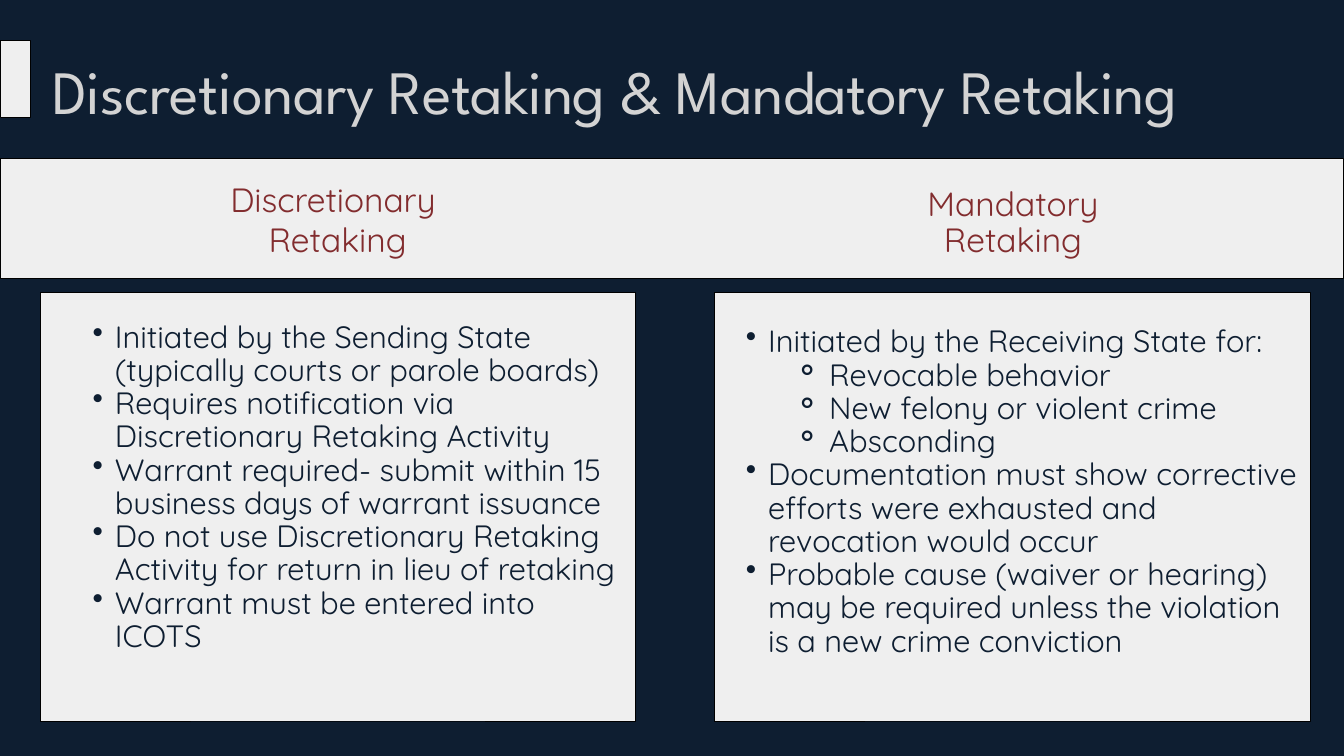
import pptx
import pptx.util
import pptx.dml.color
import pptx.enum.shapes
import pptx.enum.text
import pptx.oxml.ns
import lxml.etree

Inches = pptx.util.Inches
Pt = pptx.util.Pt
ALIGN = pptx.enum.text.PP_ALIGN

NAVY = "0E1E31"
PALE = "EFEFEF"
SILVER = "D3D3D3"
MAROON = "822C2E"
BLACK = "000000"

BULLETS = {1: ("•", 0.65, -0.33), 2: ("⚬", 1.56, -0.52)}

DISCRETIONARY = [
    (1, "Initiated by the Sending State (typically courts or parole boards)"),
    (1, "Requires notification via Discretionary Retaking Activity"),
    (1, "Warrant required- submit within 15 business days of warrant issuance"),
    (1, "Do not use Discretionary Retaking Activity for return in lieu of retaking"),
    (1, "Warrant must be entered into ICOTS"),
]
MANDATORY = [
    (1, "Initiated by the Receiving State for:"),
    (2, "Revocable behavior"),
    (2, "New felony or violent crime"),
    (2, "Absconding"),
    (1, "Documentation must show corrective efforts were exhausted and revocation would occur"),
    (1, "Probable cause (waiver or hearing) may be required unless the violation "
        "is a new crime conviction"),
]


def color(value):
    return pptx.dml.color.RGBColor.from_string(value)


def add_panel(page, left, top, width, height):
    panel = page.shapes.add_shape(
        pptx.enum.shapes.MSO_SHAPE.RECTANGLE,
        Inches(left), Inches(top), Inches(width), Inches(height))
    panel.shadow.inherit = False
    panel.fill.solid()
    panel.fill.fore_color.rgb = color(PALE)
    panel.line.color.rgb = color(BLACK)
    panel.line.width = Pt(1)


def clear_margins(frame):
    frame.word_wrap = True
    frame.margin_left = frame.margin_right = Inches(0)
    frame.margin_top = frame.margin_bottom = Inches(0)


def style_para(para, size, font, fill, spacing, align):
    para.alignment = align
    para.line_spacing = Pt(spacing)
    para.space_before = Pt(0)
    for span in para.runs:
        span.font.size = Pt(size)
        span.font.name = font
        span.font.color.rgb = color(fill)


def add_bullet(para, level):
    symbol, margin, indent = BULLETS[level]
    para.level = level
    properties = para._p.get_or_add_pPr()
    properties.set("marL", str(Inches(margin)))
    properties.set("indent", str(Inches(indent)))
    bullet = lxml.etree.SubElement(properties, pptx.oxml.ns.qn("a:buChar"))
    bullet.set("char", symbol)


def add_text(page, left, top, width, height, lines):
    box = page.shapes.add_textbox(Inches(left), Inches(top), Inches(width), Inches(height))
    clear_margins(box.text_frame)
    box.text_frame.text = "\n".join(lines)
    return box.text_frame.paragraphs


def add_heading(page, left, top, height, lines, spacing):
    for para in add_text(page, left, top, 7.23, height, lines):
        style_para(para, 36, "Quicksand", MAROON, spacing, ALIGN.CENTER)


def add_list(page, left, top, width, height, items):
    paras = add_text(page, left, top, width, height, [text for level, text in items])
    for para, (level, text) in zip(paras, items):
        add_bullet(para, level)
        style_para(para, 33, "Quicksand", NAVY, 35.6, ALIGN.LEFT)


def set_title(page, text):
    title = page.shapes.title
    title.left, title.top = Inches(0.78), Inches(0.65)
    title.width, title.height = Inches(18.47), Inches(1.48)
    frame = title.text_frame
    clear_margins(frame)
    frame.auto_size = pptx.enum.text.MSO_AUTO_SIZE.NONE
    frame.vertical_anchor = pptx.enum.text.MSO_ANCHOR.MIDDLE
    frame.text = text
    para = frame.paragraphs[0]
    style_para(para, 66, "League Spartan", SILVER, 71.3, ALIGN.LEFT)
    para.runs[0]._r.get_or_add_rPr().set("spc", "-40")


def main():
    deck = pptx.Presentation()
    deck.slide_width, deck.slide_height = Inches(20), Inches(11.25)
    page = deck.slides.add_slide(deck.slide_layouts.get_by_name("Title Only"))
    page.background.fill.solid()
    page.background.fill.fore_color.rgb = color(NAVY)

    set_title(page, "Discretionary Retaking & Mandatory Retaking")
    add_panel(page, 0, 0.6, 0.45, 1.15)
    add_panel(page, 0, 2.36, 20, 1.78)
    add_panel(page, 0.6, 4.36, 8.85, 6.37)
    add_panel(page, 10.63, 4.36, 8.87, 6.37)

    add_heading(page, 1.41, 2.66, 1.18, ["Discretionary ", "Retaking"], 43.2)
    add_heading(page, 11.46, 2.78, 1.06, ["Mandatory", "Retaking"], 38.9)
    add_list(page, 1.06, 4.78, 8.24, 5.3, DISCRETIONARY)
    add_list(page, 10.78, 4.85, 8.57, 5.44, MANDATORY)

    deck.save("out.pptx")


if __name__ == "__main__":
    main()
